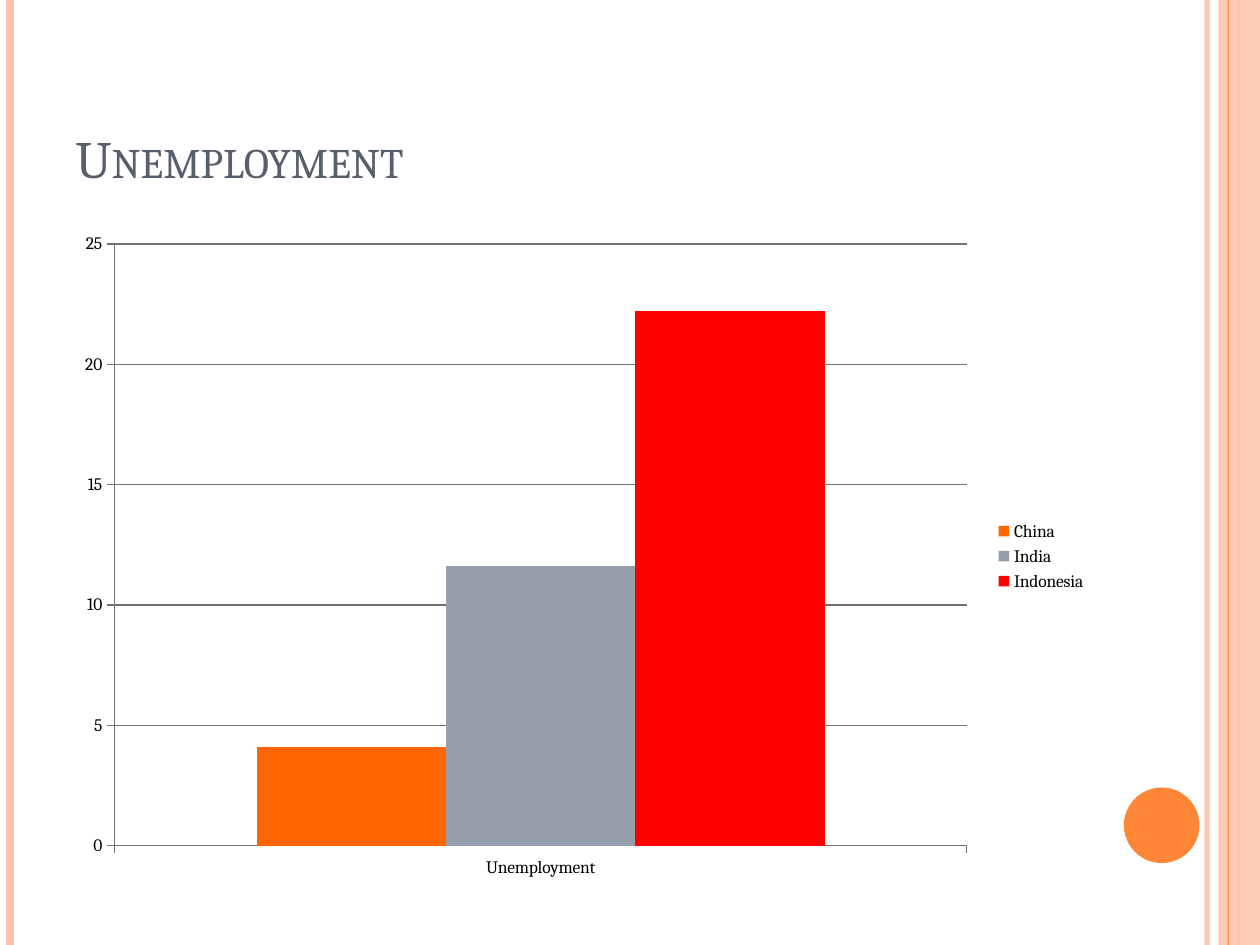
from pptx import Presentation
from pptx.chart.data import CategoryChartData
from pptx.dml.color import RGBColor
from pptx.enum.chart import XL_CHART_TYPE, XL_LEGEND_POSITION, XL_TICK_MARK
from pptx.enum.shapes import MSO_CONNECTOR, MSO_SHAPE
from pptx.enum.text import MSO_ANCHOR, PP_ALIGN
from pptx.oxml.ns import qn
from pptx.util import Inches, Pt
from lxml.etree import SubElement, Element

FONT = "Cambria"
PEACH = RGBColor(0xFE, 0xC3, 0xAE)
ORANGE = RGBColor(0xFE, 0x86, 0x37)
SLATE = RGBColor(0x57, 0x5F, 0x6D)
BLACK = RGBColor(0, 0, 0)
GREY = RGBColor(0x70, 0x70, 0x70)

SERIES = [
    ("China", 4.1, RGBColor(0xFF, 0x66, 0x00)),
    ("India", 11.6, RGBColor(0x96, 0x9E, 0xAB)),
    ("Indonesia", 22.2, RGBColor(0xFF, 0, 0)),
]


def set_alpha(sp, percent):
    """Make the fill or line colour of a shape partly transparent."""
    color = next(sp._element.spPr.iter(qn("a:srgbClr")))
    SubElement(color, qn("a:alpha")).set("val", str(percent * 1000))


def set_text(tf, text, size, color, small_caps=False, anchor=MSO_ANCHOR.TOP):
    tf.word_wrap = True
    tf.vertical_anchor = anchor
    p = tf.paragraphs[0]
    p.alignment = PP_ALIGN.LEFT
    r = p.add_run()
    r.text = text
    r.font.name, r.font.size = FONT, Pt(size)
    r.font.color.rgb = color
    if small_caps:
        r.font._element.set("cap", "small")


def add_rule(slide, x, height, color, width, alpha=None):
    line = slide.shapes.add_connector(
        MSO_CONNECTOR.STRAIGHT, Inches(x), 0, Inches(x), Inches(height))
    line.line.color.rgb = color
    line.line.width = Pt(width)
    SubElement(line._element.spPr, qn("a:effectLst"))
    if alpha:
        set_alpha(line, alpha)


def add_solid(slide, kind, box, color):
    sp = slide.shapes.add_shape(kind, *map(Inches, box))
    sp.shadow.inherit = False
    sp.fill.solid()
    sp.fill.fore_color.rgb = color
    sp.line.fill.background()
    return sp


def add_decoration(slide, width, height):
    # Vertical rules and band along the edges
    add_rule(slide, width - 0.42, height, PEACH, 3, alpha=93)
    add_rule(slide, 0.08, height, PEACH, 4.5)
    add_rule(slide, width - 0.17, height, PEACH, 1.5)
    band = add_solid(slide, MSO_SHAPE.RECTANGLE,
                     (width - 0.33, 0, 0.33, height), PEACH)
    set_alpha(band, 87)
    add_rule(slide, width - 0.25, height, ORANGE, 0.75)
    # Corner disc
    add_solid(slide, MSO_SHAPE.OVAL, (width - 1.08, 6.25, 0.6, 0.6), ORANGE)


def add_title(slide, text, box):
    title = slide.shapes.title
    title.left, title.top, title.width, title.height = map(Inches, box)
    set_text(title.text_frame, text, 30, SLATE, small_caps=True,
             anchor=MSO_ANCHOR.BOTTOM)


def make_layout(x, y, w, h, inner=False):
    """Return a manual chart layout, in fractions of the chart."""
    layout = Element(qn("c:layout"))
    manual = SubElement(layout, qn("c:manualLayout"))
    values = [("xMode", "edge"), ("yMode", "edge"),
              ("x", x), ("y", y), ("w", w), ("h", h)]
    if inner:
        values.insert(0, ("layoutTarget", "inner"))
    for tag, value in values:
        SubElement(manual, qn("c:" + tag)).set("val", str(value))
    return layout


def add_bar_chart(slide, category, box):
    data = CategoryChartData()
    data.categories = [category]
    for name, value, _ in SERIES:
        data.add_series(name, [value])
    chart = slide.shapes.add_chart(
        XL_CHART_TYPE.COLUMN_CLUSTERED, *map(Inches, box), data).chart
    chart.has_title = False
    chart.font.name, chart.font.size = FONT, Pt(10)
    chart.font.color.rgb = BLACK

    # Bars
    plot = chart.plots[0]
    plot.gap_width, plot.overlap, plot.vary_by_categories = 150, 0, False
    for series, (_, _, color) in zip(plot.series, SERIES):
        series.format.fill.solid()
        series.format.fill.fore_color.rgb = color

    # Axes and gridlines
    axis = chart.value_axis
    axis.minimum_scale, axis.maximum_scale, axis.major_unit = 0, 25, 5
    axis.has_major_gridlines = True
    for part in (axis, chart.category_axis, axis.major_gridlines):
        part.format.line.color.rgb = GREY
        part.format.line.width = Pt(0.75)
    for ax in (axis, chart.category_axis):
        ax.major_tick_mark = XL_TICK_MARK.OUTSIDE

    # Legend and plot positions
    chart.has_legend = True
    legend = chart.legend
    legend.position = XL_LEGEND_POSITION.RIGHT
    legend.include_in_layout = False
    legend._element.find(qn("c:legendPos")).addnext(
        make_layout(0.9, 0.44, 0.1, 0.12))
    area = chart._chartSpace.chart.plotArea
    for old in area.findall(qn("c:layout")):
        area.remove(old)
    area.insert(0, make_layout(0.05, 0.035, 0.828, 0.896, inner=True))


def main():
    width, height = 10, 7.5
    prs = Presentation()
    prs.slide_width, prs.slide_height = Inches(width), Inches(height)
    slide = prs.slides.add_slide(prs.slide_layouts[5])
    add_decoration(slide, width, height)
    add_title(slide, "Unemployment", (0.5, 0.3, 8.17, 1.25))
    add_bar_chart(slide, "Unemployment", (0.5, 1.75, 8.17, 5.33))
    prs.save("out.pptx")


if __name__ == "__main__":
    main()
